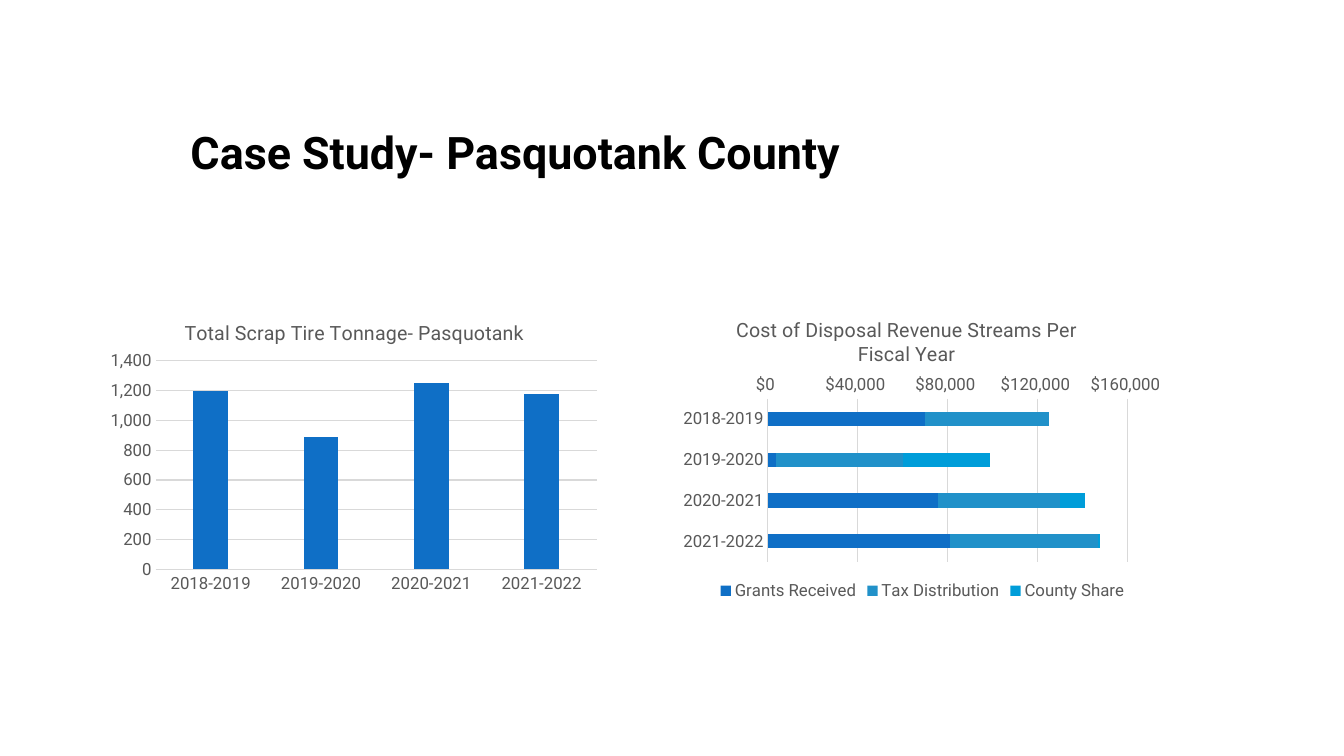
from lxml.etree import SubElement
from pptx import Presentation
from pptx.chart.data import CategoryChartData
from pptx.dml.color import RGBColor
from pptx.enum.chart import XL_CHART_TYPE as ChartType
from pptx.enum.chart import XL_LEGEND_POSITION as LegendPosition
from pptx.enum.chart import XL_TICK_MARK as TickMark
from pptx.enum.text import MSO_ANCHOR as Anchor
from pptx.oxml import parse_xml
from pptx.oxml.ns import nsdecls, qn
from pptx.util import Inches, Pt

FONT = "Roboto"
GRAY = "595959"
GRID = "D9D9D9"
YEARS = ["2018-2019", "2019-2020", "2020-2021", "2021-2022"]
TONNAGE = [("Series 1", [1200, 890, 1250, 1180], "0F6FC6")]
REVENUE = [
    ("Grants Received", [70000, 4000, 76000, 81000], "0F6FC6"),
    ("Tax Distribution", [55000, 56000, 54000, 66000], "2191C9"),
    ("County Share", [-8000, 39000, 11000, 1000], "009DD9"),
]


def color(value):
    return RGBColor.from_string(value)


def set_font(font, size, hue=GRAY, bold=False):
    font.name, font.size, font.bold = FONT, Pt(size), bold
    font.color.rgb = color(hue)


def set_line(line, hue=GRID):
    line.color.rgb = color(hue)
    line.width = Pt(0.75)


def place(part, position, **fractions):
    """Pin a title or plot area at fractions of the chart's box."""
    for old in part.findall(qn("c:layout")):
        part.remove(old)
    layout = parse_xml(f"<c:layout {nsdecls('c')}><c:manualLayout/></c:layout>")
    settings = {"xMode": "edge", "yMode": "edge", **fractions}
    if "w" in fractions:
        settings = {"layoutTarget": "inner", **settings}
    for tag, value in settings.items():
        SubElement(layout[0], qn(f"c:{tag}")).set("val", str(value))
    part.insert(position, layout)


def add_heading(page, box, text):
    frame = page.shapes.add_textbox(*map(Inches, box)).text_frame
    frame.word_wrap = True
    frame.vertical_anchor = Anchor.MIDDLE
    span = frame.paragraphs[0].add_run()
    span.text = text
    set_font(span.font, 32, "000000", bold=True)


def add_year_chart(page, box, kind, title, series, *, number_format,
                   gap, overlap, title_at, plot):
    """Add a chart by fiscal year; title_at and plot are fractions of box."""
    data = CategoryChartData()
    data.categories = YEARS
    for name, values, _ in series:
        data.add_series(name, values)
    chart = page.shapes.add_chart(kind, *map(Inches, box), data).chart
    set_font(chart.font, 10, "000000")
    chart.has_legend = False

    chart.has_title = True
    para = chart.chart_title.text_frame.paragraphs[0]
    span = para.add_run()
    span.text = title
    set_font(span.font, 14)
    place(chart.chart_title._element, 1, **dict(zip("xy", title_at)))
    place(chart._chartSpace.chart.plotArea, 0, **dict(zip("xywh", plot)))

    for axis in (chart.category_axis, chart.value_axis):
        axis.major_tick_mark = axis.minor_tick_mark = TickMark.NONE
        set_font(axis.tick_labels.font, 12)
    chart.category_axis.has_major_gridlines = False
    set_line(chart.category_axis.format.line)
    values_axis = chart.value_axis
    values_axis.format.line.fill.background()
    values_axis.has_major_gridlines = True
    set_line(values_axis.major_gridlines.format.line)
    values_axis.tick_labels.number_format = number_format
    values_axis.tick_labels.number_format_is_linked = False

    bars = chart.plots[0]
    bars.vary_by_categories = False
    bars.gap_width, bars.overlap = gap, overlap
    for bar, (_, _, hue) in zip(bars.series, series):
        bar.invert_if_negative = False
        bar.format.fill.solid()
        bar.format.fill.fore_color.rgb = color(hue)
    return chart


def add_tonnage_chart(page, box):
    add_year_chart(
        page, box, ChartType.COLUMN_CLUSTERED,
        "Total Scrap Tire Tonnage- Pasquotank", TONNAGE,
        number_format="#,##0", gap=219, overlap=-27,
        title_at=(0.16, 0.06), plot=(0.11, 0.21, 0.87, 0.69))


def add_revenue_chart(page, box):
    chart = add_year_chart(
        page, box, ChartType.BAR_STACKED,
        "Cost of Disposal Revenue Streams Per Fiscal Year", REVENUE,
        number_format='"$"#,##0_);[Red]\\("$"#,##0\\)', gap=182, overlap=100,
        title_at=(0.12, 0.05), plot=(0.19, 0.33, 0.72, 0.53))
    chart.category_axis.reverse_order = True
    chart.value_axis.minimum_scale = 0
    chart.value_axis.maximum_scale = 160000
    chart.value_axis.major_unit = 40000
    chart.has_legend = True
    chart.legend.position = LegendPosition.BOTTOM
    chart.legend.include_in_layout = False
    set_font(chart.legend.font, 12)


def main():
    deck = Presentation()
    deck.slide_width, deck.slide_height = Inches(13.33), Inches(7.5)
    page = deck.slides.add_slide(deck.slide_layouts[6])
    add_heading(page, (1.79, 0.75, 9.75, 1.5), "Case Study- Pasquotank County")
    add_revenue_chart(page, (6.67, 2.95, 4.96, 3.05))
    add_tonnage_chart(page, (0.99, 2.95, 5.03, 3))
    deck.save("out.pptx")


if __name__ == "__main__":
    main()
